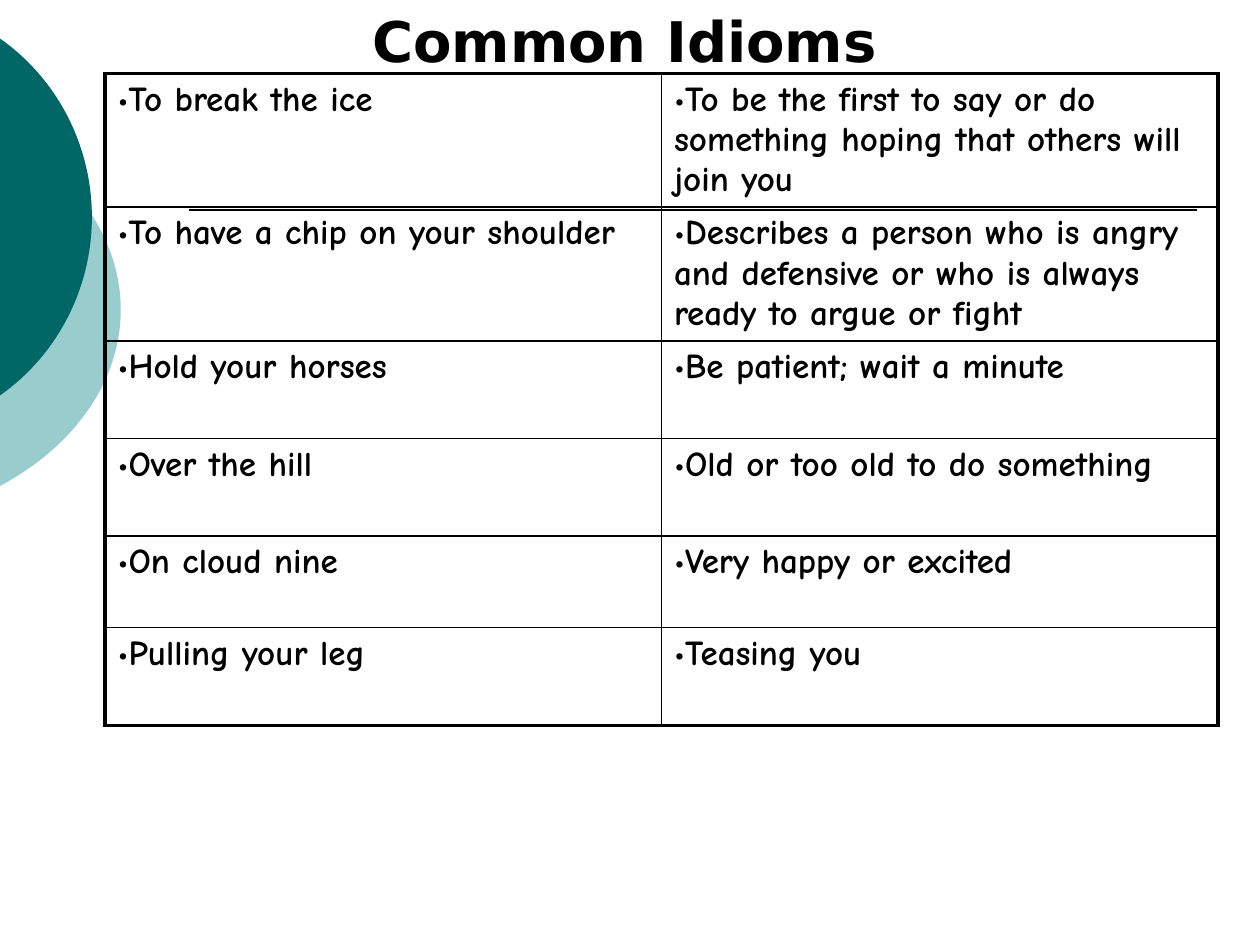
from pptx import Presentation
from pptx.util import Pt
from pptx.dml.color import RGBColor
from pptx.enum.shapes import MSO_CONNECTOR, MSO_SHAPE
from pptx.enum.text import PP_ALIGN
from lxml.etree import SubElement
from pptx.oxml.ns import qn

TITLE = "Common Idioms"
IDIOMS = [
    ("To break the ice",
     "To be the first to say or do something hoping that others will join you"),
    ("To have a chip on your shoulder",
     "Describes a person who is angry and defensive or who is always ready to argue or fight"),
    ("Hold your horses", "Be patient; wait a minute"),
    ("Over the hill", "Old or too old to do something"),
    ("On cloud nine", "Very happy or excited"),
    ("Pulling your leg", "Teasing you"),
]
COLORS = {"ink": "000000", "pale": "99CCCC", "deep": "006666"}
OVALS = [
    ("pale", (-255, 54, 324, 246)),
    ("deep", (-191, 0, 243.5, 248)),
]
HEIGHTS = [55.75, 55.75, 55.75, 55.75, 52.5, 55.75]
WIDTH = 318
FONT = "Comic Neue"


def color(name):
    return RGBColor.from_string(COLORS[name])


def style(par, size, font):
    for run in par.runs:
        run.font.size = Pt(size)
        run.font.name = font
        run.font.bold = True
        run.font.color.rgb = color("ink")


def add_oval(slide, name, place):
    oval = slide.shapes.add_shape(MSO_SHAPE.OVAL, *map(Pt, place))
    oval.shadow.inherit = False
    oval.fill.solid()
    oval.fill.fore_color.rgb = color(name)
    oval.line.fill.background()


def add_rule(slide):
    rule = slide.shapes.add_connector(
        MSO_CONNECTOR.STRAIGHT, Pt(108), Pt(120), Pt(684), Pt(120))
    rule.line.color.rgb = color("ink")
    rule.line.width = Pt(1)
    SubElement(rule._element.spPr, qn("a:effectLst"))


def set_edges(cell, row, col):
    outer = {"lnL": col == 0, "lnR": col == 1,
             "lnT": row == 0, "lnB": row == len(IDIOMS) - 1}
    props = cell._tc.get_or_add_tcPr()
    for tag, thick in outer.items():
        edge = SubElement(props, qn("a:" + tag), w=str(Pt(2.25 if thick else 1)))
        fill = SubElement(edge, qn("a:solidFill"))
        SubElement(fill, qn("a:srgbClr"), val=COLORS["ink"])


def add_bullet(par):
    props = par._p.get_or_add_pPr()
    SubElement(props, qn("a:buFont"), typeface=FONT)
    SubElement(props, qn("a:buChar"), char="•")


def add_table(slide):
    frame = slide.shapes.add_table(
        len(IDIOMS), 2, Pt(60), Pt(42), Pt(2 * WIDTH), Pt(sum(HEIGHTS)))
    table = frame.table
    table.first_row = table.horz_banding = False
    for col in table.columns:
        col.width = Pt(WIDTH)
    for r, pair in enumerate(IDIOMS):
        table.rows[r].height = Pt(HEIGHTS[r])
        for c, text in enumerate(pair):
            cell = table.cell(r, c)
            cell.text_frame.text = text
            par = cell.text_frame.paragraphs[0]
            par.space_before = Pt(4)
            add_bullet(par)
            style(par, 20, FONT)
            set_edges(cell, r, c)
            cell.fill.background()


def add_title(slide):
    box = slide.shapes.add_textbox(Pt(48), Pt(0), Pt(618), Pt(45))
    box.text_frame.word_wrap = True
    box.text_frame.text = TITLE
    par = box.text_frame.paragraphs[0]
    par.alignment = PP_ALIGN.CENTER
    style(par, 32, "DejaVu Sans")


def main():
    deck = Presentation()
    deck.slide_width, deck.slide_height = Pt(720), Pt(540)
    slide = deck.slides.add_slide(deck.slide_layouts[6])
    for name, place in OVALS:
        add_oval(slide, name, place)
    add_rule(slide)
    add_table(slide)
    add_title(slide)
    deck.save("out.pptx")


if __name__ == "__main__":
    main()
